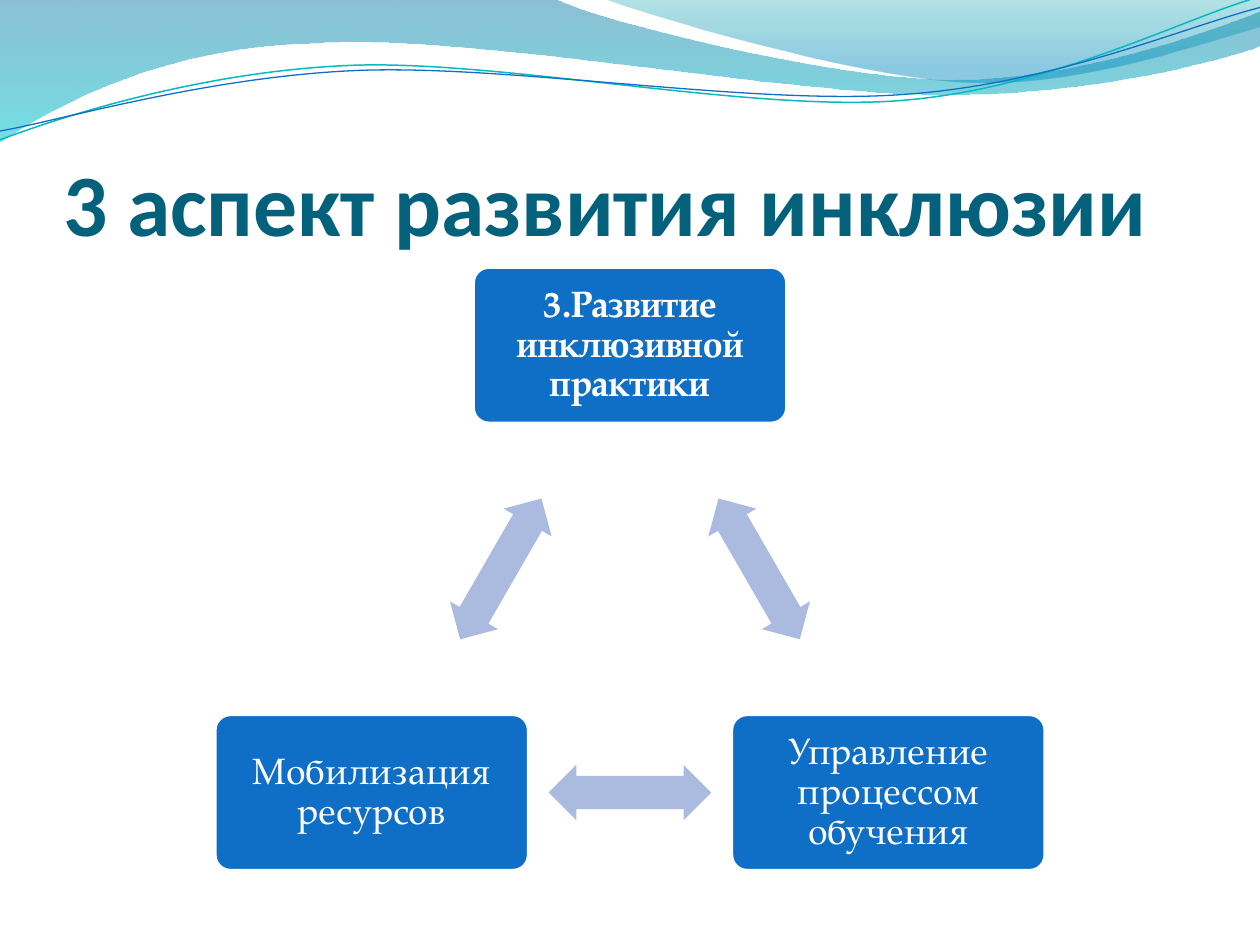
from math import atan2, degrees
from lxml import etree
from pptx import Presentation
from pptx import util as u
from pptx.dml.color import RGBColor
from pptx.enum import shapes, text
from pptx.oxml.ns import qn

HUES = {"title": "04617B", "box": "0F6FC6", "arrow": "ABBBDF", "white": "FFFFFF",
        "deep": "0074A1", "aqua": "00C6CF", "teal": "00A1A9", "sky": "008BBF",
        "wave": "0AB8BF"}
TITLE = "3 аспект развития инклюзии"
NODES = [
    ("3.Развитие инклюзивной практики", True, (5, 2.74)),
    ("Управление процессом обучения", False, (7.05, 6.29)),
    ("Мобилизация ресурсов", False, (2.95, 6.29)),
]
BOX = (2.49, 1.24)
ARROW = (1.29, 0.44)
BANDS = [
    ([(0, 0), (4.4, -0.01), (4.76, 0.17, 6.64, 0.63, 7.58, 0.63),
      (8.53, 0.63, 9.58, 0.26, 10, 0.09), (10.01, 0.36),
      (9.83, 0.44, 8.7, 0.76, 7.46, 0.75), (6.22, 0.75, 3.82, 0.28, 2.57, 0.34),
      (1.29, 0.36, 0.46, 0.83, -0.01, 1.13)],
     [(0, "deep", 45), (1, "aqua", 55)]),
    ([(4.79, -0.01), (5.09, 0.11, 6.82, 0.62, 7.69, 0.65),
      (8.56, 0.69, 9.61, 0.32, 10, 0.21), (10, 0)],
     [(0, "teal", 30), (0.8, "sky", 45)]),
]
WAVES = [
    ([(0, 1.11), (0.48, 0.93, 1.58, 0.57, 2.77, 0.52),
      (3.95, 0.47, 5.93, 0.89, 7.13, 0.8), (8.33, 0.71, 9.38, 0.15, 9.98, -0.02)],
     "wave", 0.85),
    ([(0, 1.04), (0.47, 0.96, 1.64, 0.61, 2.83, 0.56),
      (4.03, 0.51, 5.97, 0.84, 7.17, 0.75), (8.36, 0.67, 9.41, 0.21, 10, 0.06)],
     "box", 0.75),
]


def rgb(name):
    return RGBColor.from_string(HUES[name])


def outline(slide, steps, close):
    dots = [(u.Inches(step[-2]), u.Inches(step[-1])) for step in steps]
    pen = slide.shapes.build_freeform(*dots[0])
    pen.add_line_segments(dots[1:], close=close)
    shape = pen.convert_to_shape()
    shape.shadow.inherit = False
    legs = list(shape._element.iter(qn("a:lnTo")))
    for leg, step in zip(legs, steps[1:]):
        if len(step) == 6:
            leg.tag = qn("a:cubicBezTo")
            for i in (0, 1):
                dot = etree.Element(qn("a:pt"))
                dot.set("x", str(u.Inches(step[2 * i]) - shape.left))
                dot.set("y", str(u.Inches(step[2 * i + 1]) - shape.top))
                leg.insert(i, dot)
    return shape


def band(slide, steps, stops):
    shape = outline(slide, steps, True)
    shape.line.fill.background()
    shape.fill.gradient()
    shape.fill.gradient_angle = 270
    for stop, (place, name, _) in zip(shape.fill.gradient_stops, stops):
        stop.position = place
        stop.color.rgb = rgb(name)
    tints = shape._element.spPr.iter(qn("a:srgbClr"))
    for tint, (_, _, alpha) in zip(tints, stops):
        etree.SubElement(tint, qn("a:alpha")).set("val", str(alpha * 1000))


def wave(slide, steps, name, width):
    shape = outline(slide, steps, False)
    shape.fill.background()
    shape.line.color.rgb = rgb(name)
    shape.line.width = u.Pt(width)


def block(slide, kind, mid, size, name):
    (x, y), (w, h) = mid, size
    shape = slide.shapes.add_shape(
        kind, u.Inches(x - w / 2), u.Inches(y - h / 2), u.Inches(w), u.Inches(h))
    shape.shadow.inherit = False
    shape.fill.solid()
    shape.fill.fore_color.rgb = rgb(name)
    return shape


def write(para, words, font, size, name, bold):
    run = para.add_run()
    run.text = words
    run.font.name = font
    run.font.size = u.Pt(size)
    run.font.bold = bold
    run.font.color.rgb = rgb(name)


def pad(frame, left, top, right, base):
    frame.margin_left, frame.margin_top = u.Inches(left), u.Inches(top)
    frame.margin_right, frame.margin_bottom = u.Inches(right), u.Inches(base)
    frame.word_wrap = True


def node(slide, words, bold, mid):
    shape = block(slide, shapes.MSO_SHAPE.ROUNDED_RECTANGLE, mid, BOX, "box")
    shape.adjustments[0] = 0.1
    shape.line.color.rgb = rgb("white")
    shape.line.width = u.Pt(2)
    frame = shape.text_frame
    pad(frame, 0.13, 0.13, 0.13, 0.13)
    frame.vertical_anchor = text.MSO_ANCHOR.MIDDLE
    para = frame.paragraphs[0]
    para.alignment = text.PP_ALIGN.CENTER
    para.line_spacing = 0.9
    write(para, words, "TeX Gyre Pagella", 21, "white", bold)


def arrow(slide, here, there):
    mid = tuple((a + b) / 2 for a, b in zip(here, there))
    shape = block(slide, shapes.MSO_SHAPE.LEFT_RIGHT_ARROW, mid, ARROW, "arrow")
    shape.adjustments[0] = 0.6
    shape.adjustments[1] = 0.5
    shape.line.fill.background()
    shape.rotation = round(degrees(atan2(there[1] - here[1], there[0] - here[0]))) % 360


def head(slide):
    title = slide.shapes.title
    slide.shapes._spTree.append(title._element)
    title.left, title.top = u.Inches(0.5), u.Inches(0.77)
    title.width, title.height = u.Inches(9), u.Inches(1.25)
    frame = title.text_frame
    pad(frame, 0, 0.05, 0, 0)
    frame.auto_size = text.MSO_AUTO_SIZE.NONE
    frame.vertical_anchor = text.MSO_ANCHOR.BOTTOM
    para = frame.paragraphs[0]
    para.alignment = text.PP_ALIGN.LEFT
    write(para, TITLE, "Calibri", 50, "title", True)


def main():
    deck = Presentation()
    deck.slide_width, deck.slide_height = u.Inches(10), u.Inches(7.5)
    slide = deck.slides.add_slide(deck.slide_layouts[5])
    for item in BANDS:
        band(slide, *item)
    for item in WAVES:
        wave(slide, *item)
    head(slide)
    for i, (words, bold, mid) in enumerate(NODES):
        node(slide, words, bold, mid)
        arrow(slide, mid, NODES[(i + 1) % len(NODES)][2])
    deck.save("out.pptx")


if __name__ == "__main__":
    main()
